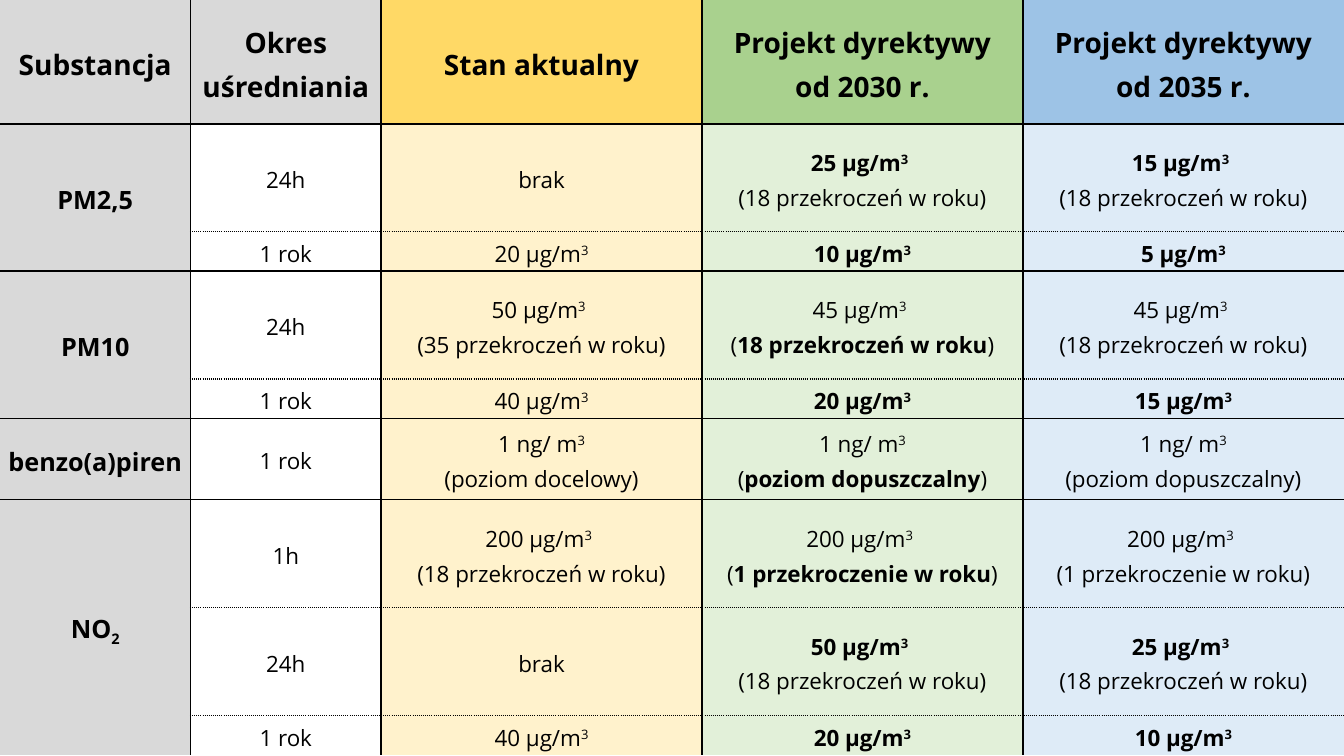
from copy import deepcopy
from dataclasses import dataclass
from itertools import groupby, product

from lxml import etree
from pptx import Presentation
from pptx.dml.color import RGBColor
from pptx.enum import text as tx
from pptx.oxml import ns
from pptx.util import Inches, Pt


@dataclass(frozen=True)
class Theme:
    font: str = "Open Sans"
    ink: str = "000000"
    heads: tuple = ("D9D9D9", "D9D9D9", "FFD966", "A9D18E", "9DC3E6")
    fills: tuple = ("D9D9D9", "FFFFFF", "FFF2CC", "E2F0D9", "DEEBF7")
    head: int = 20
    name: int = 18
    body: int = 16
    line: float = 1
    lead: float = 1.15


WIDE, HIGH = 13.33, 7.5
SIDE = 1.89
COLS = [SIDE] * 2 + [(WIDE - 2 * SIDE) / 3] * 3
ROWS = [1.23, 1.07, 0.39, 1.07, 0.39, 0.81, 1.07, 1.07, 0.39]
# First and last row of each substance
GROUPS = [(1, 2), (3, 4), (5, 5), (6, 8)]
# Asterisks enclose bold text
LIMITS = [
    ["Substancja", "Okres uśredniania", "Stan aktualny",
     "Projekt dyrektywy\nod 2030 r.", "Projekt dyrektywy\nod 2035 r."],
    ["PM2,5", "24h", "brak",
     "*25 μg/m³ *\n(18 przekroczeń w roku)",
     "*15 μg/m³ *\n(18 przekroczeń w roku)"],
    ["", "1 rok", "20 μg/m³", "*10 μg/m³*", "*5 μg/m³*"],
    ["PM10", "24h",
     "50 μg/m³ \n(35 przekroczeń w roku)",
     "45 μg/m³ \n(*18 przekroczeń w roku*)",
     "45 μg/m³ \n(18 przekroczeń w roku)"],
    ["", "1 rok", "40 μg/m³", "*20 μg/m³*", "*15 μg/m³*"],
    ["benzo(a)piren", "1 rok",
     "1 ng/ m³\n(poziom docelowy)",
     "1 ng/ m³\n(*poziom dopuszczalny*)",
     "1 ng/ m³\n(poziom dopuszczalny)"],
    ["NO₂", "1h",
     "200 μg/m³ \n(18 przekroczeń w roku)",
     "200 μg/m³ \n(*1 przekroczenie w roku*)",
     "200 μg/m³ \n(1 przekroczenie w roku)"],
    ["", "24h", "brak",
     "*50 μg/m³ *\n(18 przekroczeń w roku)",
     "*25 μg/m³ *\n(18 przekroczeń w roku)"],
    ["", "1 rok", "40 μg/m³", "*20 μg/m³*", "*10 μg/m³*"],
]
SHIFTS = {"³": ("3", 30000), "₂": ("2", -25000)}


class Deck:
    def __init__(self, theme):
        self.theme = theme
        self.prs = Presentation()
        self.prs.slide_width = Inches(WIDE)
        self.prs.slide_height = Inches(HIGH)
        self.slide = self.prs.slides.add_slide(self.prs.slide_layouts[6])

    def table(self):
        frame = self.slide.shapes.add_table(
            len(ROWS), len(COLS), 0, 0, Inches(WIDE), Inches(HIGH))
        grid = frame.table
        grid.first_row = grid.horz_banding = False
        for col, width in zip(grid.columns, COLS):
            col.width = Inches(width)
        for row, height in zip(grid.rows, ROWS):
            row.height = Inches(height)
        for row, col in product(range(len(ROWS)), range(len(COLS))):
            self.cell(grid.cell(row, col), row, col)
        for first, last in GROUPS:
            if last > first:
                grid.cell(first, 0).merge(grid.cell(last, 0))

    def cell(self, cell, row, col):
        look = self.theme
        cell.margin_left = cell.margin_right = Inches(0.07)
        cell.margin_top = cell.margin_bottom = 0
        cell.vertical_anchor = tx.MSO_ANCHOR.MIDDLE
        cell.fill.solid()
        shades = look.fills if row else look.heads
        cell.fill.fore_color.rgb = RGBColor.from_string(shades[col])
        self.edges(cell, row, col)
        size = look.body
        if row == 0:
            size = look.head
        elif col == 0:
            size = look.name
        self.label(cell.text_frame.paragraphs[0], LIMITS[row][col],
                   size, row == 0 or col == 0)

    def edges(self, cell, row, col):
        """Rule inner edges only, dotted between rows of one substance."""
        ends = [0] + [last for _, last in GROUPS]
        top = "solid" if row - 1 in ends else "sysDot"
        low = "solid" if row in ends else "sysDot"
        last = len(ROWS) - 1
        if col == 0:
            top = low = "solid"
            if row >= GROUPS[-1][0]:
                low = None
        kinds = {
            "L": "solid" if col else None,
            "R": "solid" if col < len(COLS) - 1 else None,
            "T": top if row else None,
            "B": low if row < last else None,
        }
        props = cell._tc.get_or_add_tcPr()
        for spot, (side, dash) in enumerate(kinds.items()):
            line = etree.Element(ns.qn(f"a:ln{side}"))
            props.insert(spot, line)
            if dash is None:
                etree.SubElement(line, ns.qn("a:noFill"))
                continue
            line.set("w", str(Pt(self.theme.line)))
            fill = etree.SubElement(line, ns.qn("a:solidFill"))
            etree.SubElement(fill, ns.qn("a:srgbClr"), val=self.theme.ink)
            etree.SubElement(line, ns.qn("a:prstDash"), val=dash)

    def label(self, para, words, size, bold):
        """Add runs, with bold parts, line breaks and raised or lowered digits."""
        para.alignment = tx.PP_ALIGN.CENTER
        para.line_spacing = self.theme.lead
        for turn, part in enumerate(words.split("*")):
            marks = groupby(part, lambda c: c if c in "³₂\n" else "")
            for mark, chars in marks:
                if mark == "\n":
                    para.add_line_break()
                    para._p[-1].append(deepcopy(para.runs[-1]._r.rPr))
                    continue
                run = para.add_run()
                run.text, shift = SHIFTS.get(mark, ("".join(chars), 0))
                run.font.name = self.theme.font
                run.font.size = Pt(size)
                run.font.bold = bold or turn % 2 == 1
                run.font.color.rgb = RGBColor.from_string(self.theme.ink)
                if shift:
                    run._r.rPr.set("baseline", str(shift))


def main():
    deck = Deck(Theme())
    deck.table()
    deck.prs.save("out.pptx")


if __name__ == "__main__":
    main()
